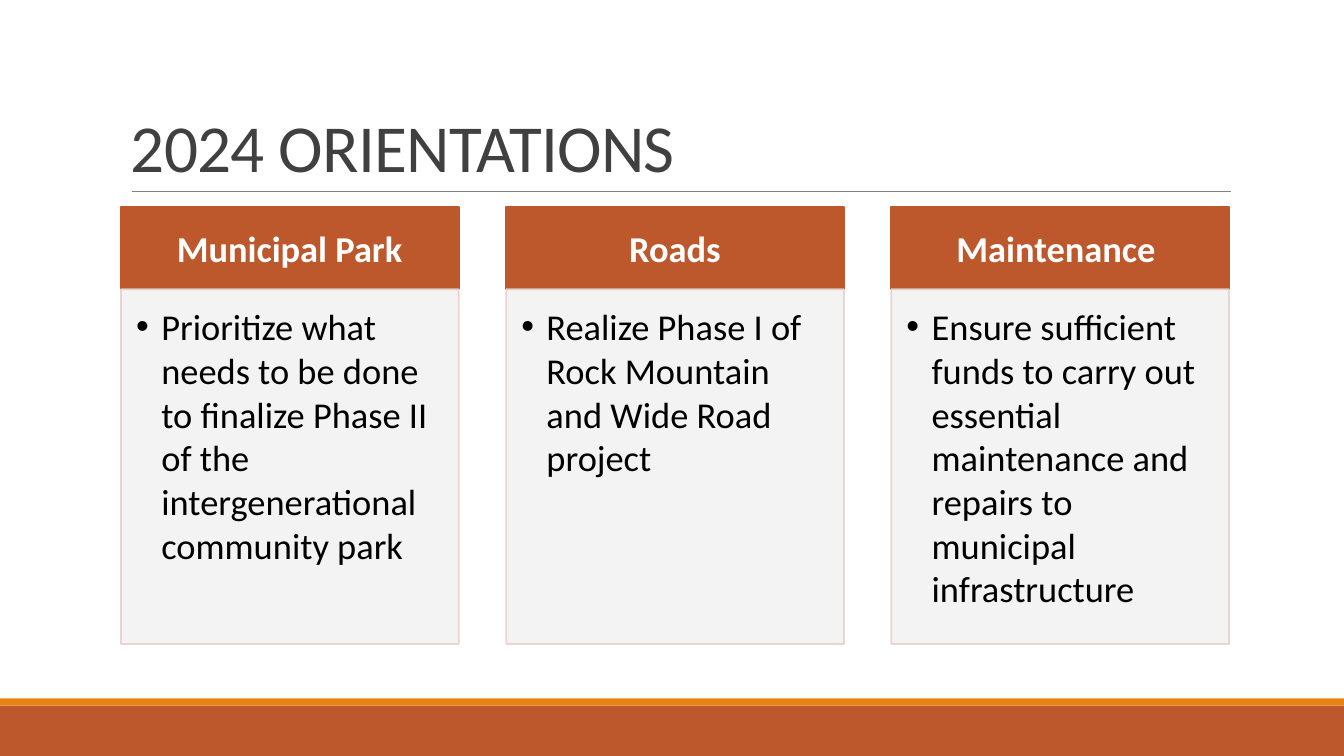
from lxml import etree
from pptx import Presentation
from pptx.dml.color import RGBColor
from pptx.enum.shapes import MSO_CONNECTOR, MSO_SHAPE
from pptx.enum.text import MSO_ANCHOR, PP_ALIGN
from pptx.oxml.ns import qn
from pptx.util import Inches, Pt

RECTANGLE = MSO_SHAPE.RECTANGLE
STRAIGHT = MSO_CONNECTOR.STRAIGHT
TOP, MIDDLE, BOTTOM = MSO_ANCHOR.TOP, MSO_ANCHOR.MIDDLE, MSO_ANCHOR.BOTTOM
LEFT, CENTER = PP_ALIGN.LEFT, PP_ALIGN.CENTER

# Content
TITLE = "2024 ORIENTATIONS"
COLUMNS = [
    ("Municipal Park", "Prioritize what needs to be done to finalize Phase II "
     "of the intergenerational community park"),
    ("Roads", "Realize Phase I of Rock Mountain and Wide Road project"),
    ("Maintenance ", "Ensure sufficient funds to carry out essential "
     "maintenance and repairs to municipal infrastructure"),
]

# Colours and text formats
RUST = RGBColor(0xBD, 0x58, 0x2C)
ORANGE = RGBColor(0xE4, 0x83, 0x12)
GRAY = RGBColor(0x80, 0x80, 0x80)
CHARCOAL = RGBColor(0x40, 0x40, 0x40)
PANEL = RGBColor(0xF2, 0xF2, 0xF2)
PANEL_EDGE = RGBColor(0xE8, 0xD1, 0xCD)
WHITE = RGBColor(0xFF, 0xFF, 0xFF)
BLACK = RGBColor(0, 0, 0)
FONT = "Calibri"
TITLE_FORMAT = {"size": 48, "color": CHARCOAL, "bold": False, "align": LEFT,
                "anchor": BOTTOM, "insets": (0.1, 0.05, 0.1, 0.05)}
HEADER_FORMAT = {"size": 26, "color": WHITE, "bold": True, "align": CENTER,
                 "anchor": MIDDLE, "insets": (0.2, 0.12, 0.2, 0.12)}
BODY_FORMAT = {"size": 26, "color": BLACK, "bold": False, "align": LEFT,
               "anchor": TOP, "insets": (0.15, 0.15, 0.2, 0.23)}

# Layout in inches
SLIDE_WIDTH, SLIDE_HEIGHT = 13.33, 7.5
COLUMN_LEFT, COLUMN_STEP, COLUMN_WIDTH = 1.2, 3.82, 3.35
HEADER_TOP, HEADER_HEIGHT, BODY_HEIGHT = 2.05, 0.82, 3.52
BANDS = [(7, 0.5, RUST), (6.93, 0.07, ORANGE)]


def set_opacity(color_format_parent, percent):
    for color in color_format_parent.iter(qn("a:srgbClr")):
        etree.SubElement(color, qn("a:alpha"), val=str(percent * 1000))


def add_box(slide, box, fill, edge=None):
    shape = slide.shapes.add_shape(RECTANGLE, *map(Inches, box))
    shape.shadow.inherit = False
    shape.fill.solid()
    shape.fill.fore_color.rgb = fill
    if edge is None:
        shape.line.fill.background()
    else:
        shape.line.color.rgb = edge
        shape.line.width = Pt(1.25)
    return shape


def write_text(shape, text, style):
    frame = shape.text_frame
    frame.word_wrap = True
    frame.vertical_anchor = style["anchor"]
    for side, inset in zip(("left", "top", "right", "bottom"), style["insets"]):
        setattr(frame, f"margin_{side}", Inches(inset))
    paragraph = frame.paragraphs[0]
    paragraph.alignment = style["align"]
    run = paragraph.add_run()
    run.text = text
    font_values = {"name": FONT, "size": Pt(style["size"]), "bold": style["bold"]}
    for name, value in font_values.items():
        setattr(run.font, name, value)
    run.font.color.rgb = style["color"]
    return paragraph


def add_bullet(paragraph):
    properties = paragraph._p.get_or_add_pPr()
    properties.set("marL", str(Inches(0.25)))
    properties.set("indent", str(Inches(-0.25)))
    etree.SubElement(properties, qn("a:buFont"), typeface="Arial")
    etree.SubElement(properties, qn("a:buChar"), char="•")


def main():
    presentation = Presentation()
    presentation.slide_width = Inches(SLIDE_WIDTH)
    presentation.slide_height = Inches(SLIDE_HEIGHT)
    slide = presentation.slides.add_slide(presentation.slide_layouts[6])

    # Footer bands
    for top, height, color in BANDS:
        add_box(slide, (0, top, SLIDE_WIDTH, height), color)

    # Title and rule
    rule = slide.shapes.add_connector(
        STRAIGHT, Inches(1.31), Inches(1.9), Inches(12.21), Inches(1.9))
    rule.line.color.rgb = GRAY
    rule.line.width = Pt(0.5)
    etree.SubElement(rule._element.spPr, qn("a:effectLst"))
    title = slide.shapes.add_textbox(*map(Inches, (1.2, 0.31, 11, 1.59)))
    paragraph = write_text(title, TITLE, TITLE_FORMAT)
    paragraph.line_spacing = 0.85
    paragraph.runs[0].font._element.set("spc", "-50")

    # Columns: header above bulleted panel
    for index, (heading, body) in enumerate(COLUMNS):
        left = COLUMN_LEFT + index * COLUMN_STEP
        header = add_box(
            slide, (left, HEADER_TOP, COLUMN_WIDTH, HEADER_HEIGHT), RUST, RUST)
        write_text(header, heading, HEADER_FORMAT)
        panel = add_box(
            slide, (left, HEADER_TOP + HEADER_HEIGHT, COLUMN_WIDTH, BODY_HEIGHT),
            PANEL, PANEL_EDGE)
        set_opacity(panel._element.spPr, 90)
        add_bullet(write_text(panel, body, BODY_FORMAT))

    presentation.save("out.pptx")


if __name__ == "__main__":
    main()
